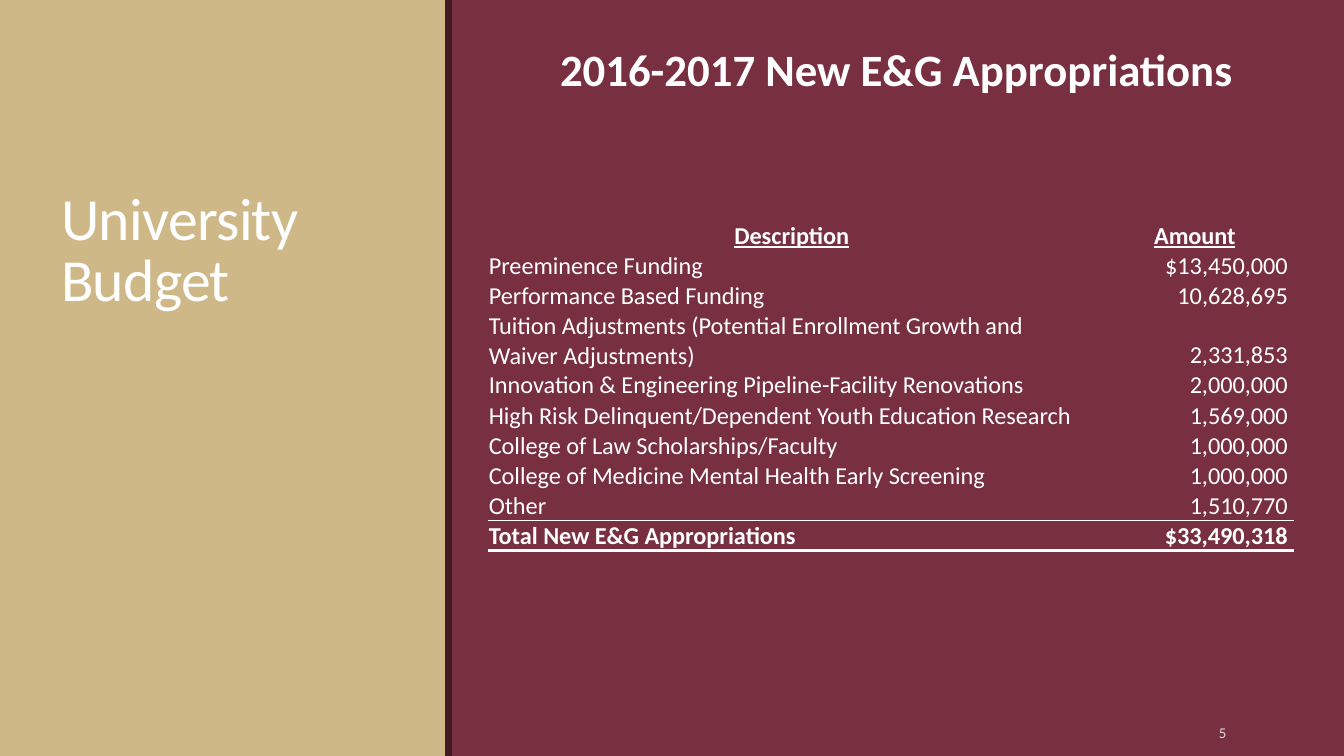
from lxml.etree import SubElement
from pptx import Presentation
from pptx.dml.color import RGBColor
from pptx.enum.shapes import MSO_SHAPE as SHAPE
from pptx.enum.text import MSO_ANCHOR as ANCHOR, PP_ALIGN as ALIGN
from pptx.oxml.ns import qn
from pptx.util import Pt

# Content
TITLE = "University\vBudget"
HEADING = "2016-2017 New E&G Appropriations"
PAGE = "5"
ROWS = [
    ("Description", "Amount"),
    ("Preeminence Funding", "$13,450,000"),
    ("Performance Based Funding", "10,628,695"),
    ("Tuition Adjustments (Potential Enrollment Growth and Waiver Adjustments)", "2,331,853"),
    ("Innovation & Engineering Pipeline-Facility Renovations", "2,000,000"),
    ("High Risk Delinquent/Dependent Youth Education Research", "1,569,000"),
    ("College of Law Scholarships/Faculty", "1,000,000"),
    ("College of Medicine Mental Health Early Screening", "1,000,000"),
    ("Other", "1,510,770"),
    ("Total New E&G Appropriations", "$33,490,318"),
]

# Style
FONT = "Calibri"
GARNET, DARK, GOLD, WHITE, GREY = "782F40", "421A24", "CEB888", "FFFFFF", "D9D9DB"
WIDTH, HEIGHT = 720, 405
COLS = (325.4, 106.6)
ROW_H = 14.4
NO_STYLE = "{2D5ABB26-0587-4C30-8999-92F81FD0307C}"


def rgb(color):
    return RGBColor.from_string(color)


def style(p, size, color=WHITE, bold=False, underline=False, align=ALIGN.LEFT):
    p.alignment = align
    for r in p.runs:
        f = r.font
        f.name, f.size, f.bold, f.underline = FONT, Pt(size), bold, underline
        f.color.rgb = rgb(color)


def add_panel(x, w, color):
    sp = s.shapes.add_shape(SHAPE.RECTANGLE, Pt(x), 0, Pt(w), Pt(HEIGHT))
    sp.shadow.inherit = False
    sp.fill.solid()
    sp.fill.fore_color.rgb = rgb(color)
    sp.line.fill.background()


def add_text(text, x, y, w, h, size, anchor=ANCHOR.TOP, margins=(5.4, 2.7), **look):
    tf = s.shapes.add_textbox(Pt(x), Pt(y), Pt(w), Pt(h)).text_frame
    tf.word_wrap = True
    tf.vertical_anchor = anchor
    tf.margin_left = tf.margin_right = Pt(margins[0])
    tf.margin_top = tf.margin_bottom = Pt(margins[1])
    p = tf.paragraphs[0]
    p.text = text
    style(p, size, **look)
    return p


def add_border(cell, side, width):
    ln = SubElement(cell._tc.get_or_add_tcPr(), qn(f"a:ln{side}"), w=str(Pt(width)))
    fill = SubElement(ln, qn("a:solidFill"))
    SubElement(fill, qn("a:srgbClr"), val=WHITE)


prs = Presentation()
prs.slide_width, prs.slide_height = Pt(WIDTH), Pt(HEIGHT)
s = prs.slides.add_slide(prs.slide_layouts[6])
s.background.fill.solid()
s.background.fill.fore_color.rgb = rgb(GARNET)

# Side panel and its edge
add_panel(0, 239, GOLD)
add_panel(238.5, 3.6, DARK)

# Title, heading and page number
p = add_text(TITLE, 27.4, 35.3, 197.3, 135.4, 32, ANCHOR.BOTTOM)
p.line_spacing = 0.85
for r in p.runs:
    r.font._element.set("spc", "-40")
add_text(HEADING, 253.4, 18.7, 453.6, 36, 24, margins=(7.2, 3.6), bold=True, align=ALIGN.CENTER)
add_text(PAGE, 584.6, 381.6, 77.8, 21.6, 8, ANCHOR.MIDDLE, color=GREY, align=ALIGN.RIGHT)

# Appropriations table
last = len(ROWS) - 1
table = s.shapes.add_table(len(ROWS), len(COLS), Pt(261.4), Pt(118.1),
                           Pt(sum(COLS)), Pt(ROW_H * len(ROWS))).table
table.first_row = table.horz_banding = False
table._tbl.tblPr.find(qn("a:tableStyleId")).text = NO_STYLE
for col, w in zip(table.columns, COLS):
    col.width = Pt(w)
for i, row in enumerate(ROWS):
    table.rows[i].height = Pt(ROW_H)
    head, total = i == 0, i == last
    for j, text in enumerate(row):
        cell = table.cell(i, j)
        cell.vertical_anchor = ANCHOR.BOTTOM
        cell.margin_left = cell.margin_top = Pt(0.5)
        cell.margin_right = Pt(3.6 if j and not head else 0.5)
        cell.margin_bottom = 0
        p = cell.text_frame.paragraphs[0]
        p.text = text
        align = ALIGN.CENTER if head else (ALIGN.LEFT, ALIGN.RIGHT)[j]
        style(p, 13, bold=head or total, underline=head, align=align)
        if total:
            add_border(cell, "T", 0.5)
            add_border(cell, "B", 2)
        elif i == last - 1:
            add_border(cell, "B", 0.5)
        cell.fill.background()

prs.save("out.pptx")
